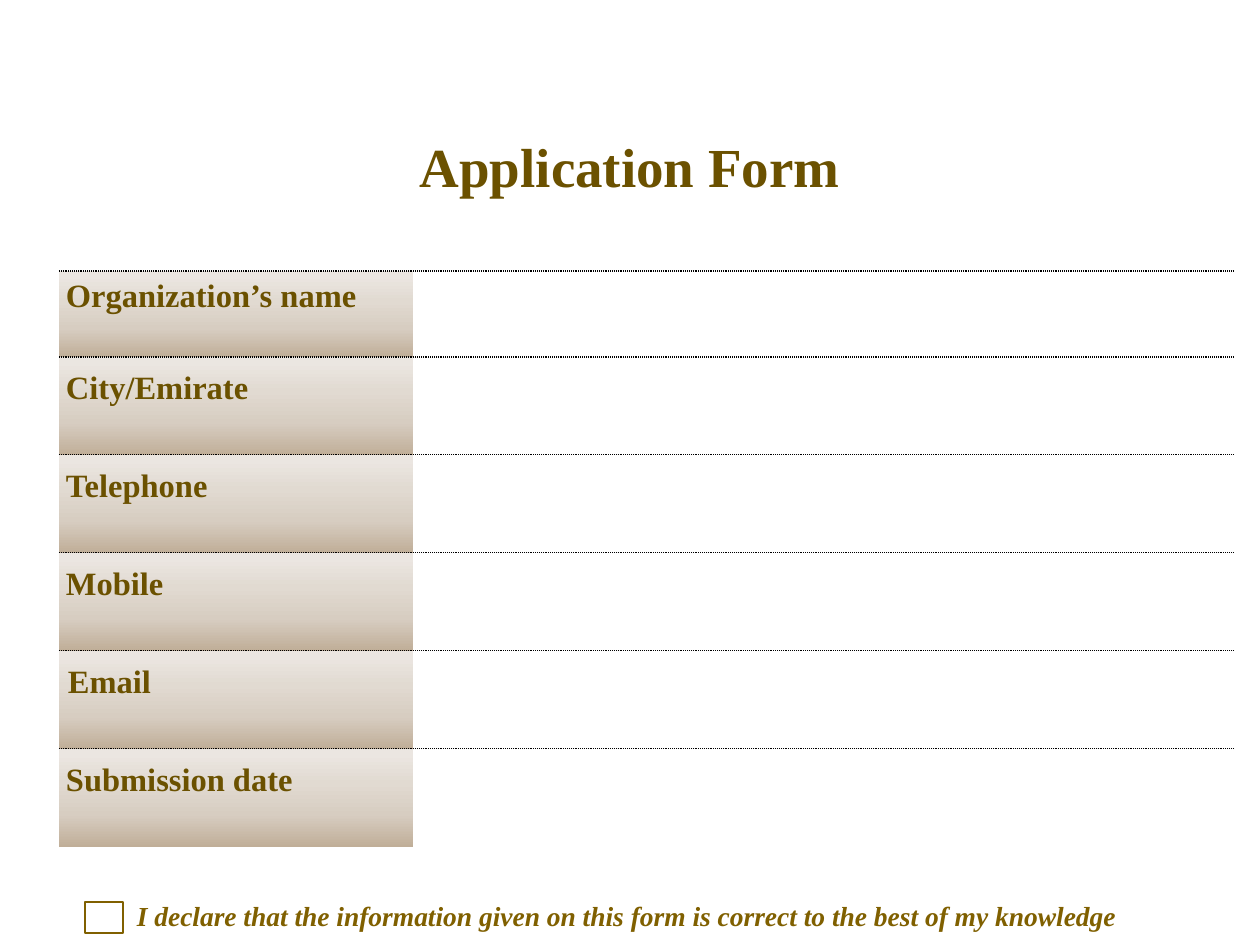
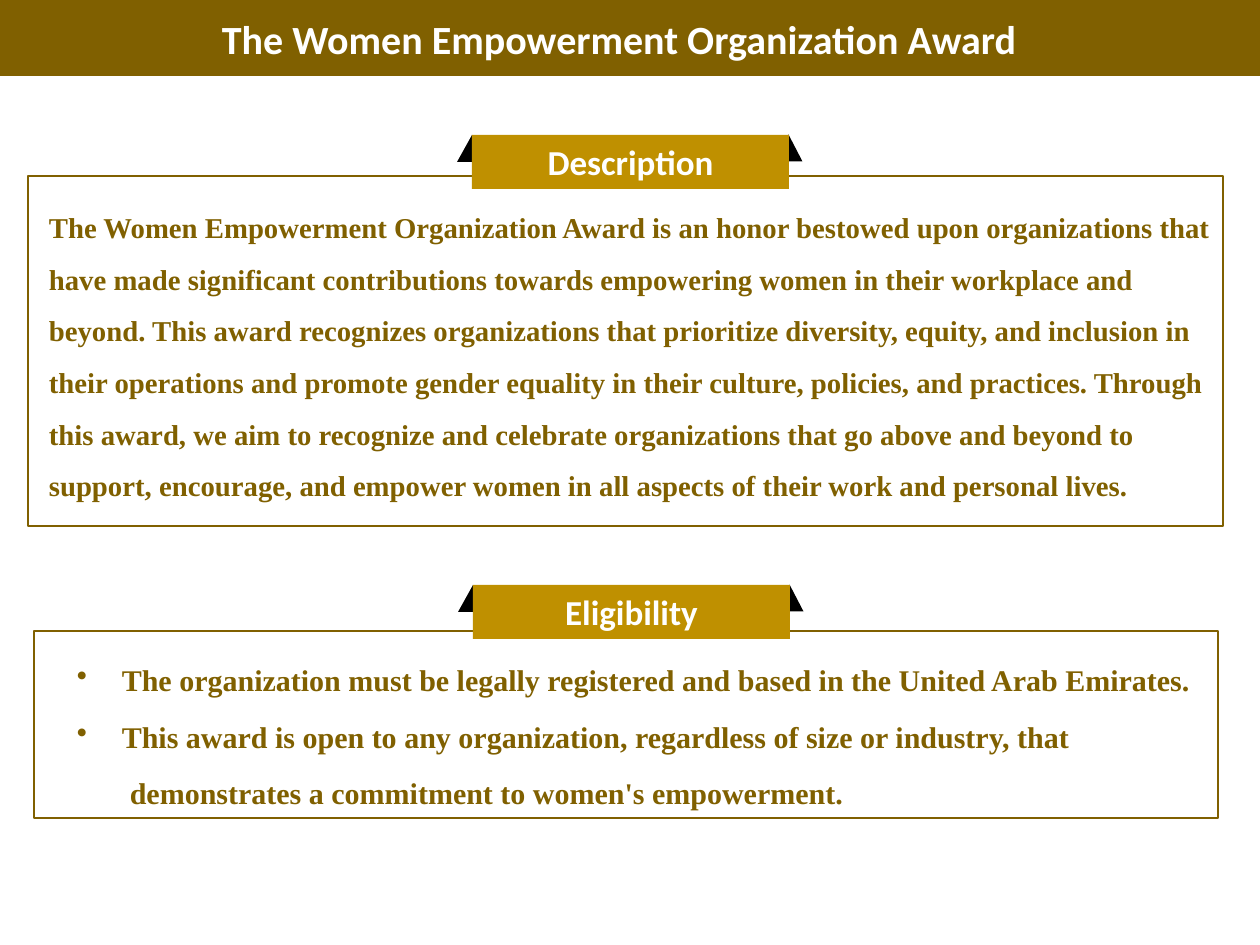
from dataclasses import dataclass
from lxml.etree import SubElement
from pptx import Presentation
from pptx.dml.color import RGBColor
from pptx.enum.shapes import MSO_SHAPE
from pptx.enum.text import MSO_ANCHOR, PP_ALIGN
from pptx.oxml import parse_xml
from pptx.oxml.ns import nsdecls, qn
from pptx.util import Pt

PX = 10160  # EMU in one px, 90 px to the inch


@dataclass(frozen=True)
class Theme:
    gold: str = "806000"
    deep_gold: str = "6B5100"
    ribbon: str = "BF9000"
    black: str = "000000"
    white: str = "FFFFFF"
    label_stops: tuple = ((0, "C0AE98"), (33, "D7CDC1"), (65, "E1DAD1"), (94, "EBE6E1"))
    serif: str = "Times New Roman"
    sans: str = "Calibri"
    form_title: int = 44
    band_title: int = 32
    ribbon_label: int = 28
    field_label: int = 26
    criteria: int = 24
    body: int = 23
    declaration: int = 22


T = Theme()

FIELDS = ["Organization’s name", "City/Emirate", "Telephone", "Mobile", "Email", "Submission date"]

DESCRIPTION = (
    "The Women Empowerment Organization Award is an honor bestowed upon organizations that have made "
    "significant contributions towards empowering women in their workplace and beyond. This award "
    "recognizes organizations that prioritize diversity, equity, and inclusion in their operations and "
    "promote gender equality in their culture, policies, and practices. Through this award, we aim to "
    "recognize and celebrate organizations that go above and beyond to support, encourage, and empower "
    "women in all aspects of their work and personal lives."
)

# Text, left indent in px, bulleted
CRITERIA = [
    ("The organization must be legally registered and based in the United Arab Emirates.", 45, True),
    ("This award is open to any organization, regardless of size or industry, that", 45, True),
    ("demonstrates a commitment to women's empowerment.", 53, False),
]


def px(*values):
    return [round(v * PX) for v in values]


def add_run(p, text, size, color, font=T.serif, italic=False):
    r = p.add_run()
    r.text = text
    r.font.name = font
    r.font.size = Pt(size)
    r.font.bold = True
    r.font.italic = italic
    r.font.color.rgb = RGBColor.from_string(color)


def add_box(s, box, fill=None, line=None, kind=MSO_SHAPE.RECTANGLE):
    sp = s.shapes.add_shape(kind, *px(*box))
    sp.shadow.inherit = False
    if fill:
        sp.fill.solid()
        sp.fill.fore_color.rgb = RGBColor.from_string(fill)
    else:
        sp.fill.background()
    if line:
        sp.line.color.rgb = RGBColor.from_string(line)
        sp.line.width = Pt(1)
    else:
        sp.line.fill.background()
    return sp


def add_label(sp, text, size, color, font):
    tf = sp.text_frame
    tf.vertical_anchor = MSO_ANCHOR.MIDDLE
    p = tf.paragraphs[0]
    p.alignment = PP_ALIGN.CENTER
    add_run(p, text, size, color, font)


def add_text(s, box):
    tf = s.shapes.add_textbox(*px(*box)).text_frame
    tf.word_wrap = True
    return tf


def set_indent(p, left, hanging=0):
    pPr = p._p.get_or_add_pPr()
    pPr.set("marL", str(left * PX))
    pPr.set("indent", str(-hanging * PX))
    return pPr


# Table cells
def set_borders(cell, top, bottom):
    tcPr = cell._tc.get_or_add_tcPr()
    for i, (side, dotted) in enumerate((("L", False), ("R", False), ("T", top), ("B", bottom))):
        look = (f'<a:solidFill><a:srgbClr val="{T.black}"/></a:solidFill><a:prstDash val="sysDot"/>'
                if dotted else "<a:noFill/>")
        tcPr.insert(i, parse_xml(f'<a:ln{side} {nsdecls("a")} w="12700">{look}</a:ln{side}>'))


def set_gradient(cell):
    stops = "".join(f'<a:gs pos="{pos * 1000}"><a:srgbClr val="{color}"/></a:gs>'
                    for pos, color in T.label_stops)
    cell._tc.get_or_add_tcPr().append(parse_xml(
        f'<a:gradFill {nsdecls("a")}><a:gsLst>{stops}</a:gsLst>'
        '<a:lin ang="16200000" scaled="0"/></a:gradFill>'))


def add_form_table(s):
    heights = [86] + [98] * (len(FIELDS) - 1)
    widths = [354, 821]
    table = s.shapes.add_table(len(FIELDS), 2, *px(59, 271, sum(widths), sum(heights))).table
    table.first_row = table.horz_banding = False
    for column, width in zip(table.columns, widths):
        column.width = width * PX
    for i, (field, height) in enumerate(zip(FIELDS, heights)):
        table.rows[i].height = height * PX
        label, entry = table.cell(i, 0), table.cell(i, 1)
        label.margin_left, label.margin_top, label.margin_right, label.margin_bottom = px(7, 0, 7, 35)
        label.vertical_anchor = MSO_ANCHOR.MIDDLE
        p = label.text_frame.paragraphs[0]
        if field == "Email":
            set_indent(p, 2)
        add_run(p, field, T.field_label, T.deep_gold)
        set_gradient(label)
        entry.fill.background()
        for cell in (label, entry):
            set_borders(cell, top=True, bottom=i < len(FIELDS) - 1)


# Framed section with a folded ribbon on its top edge
def add_section(s, label, frame, left, top):
    add_box(s, frame, line=T.gold)
    folds = [((left - 15, top, 15, 27), 0), ((left + 310, top + 6, 27, 14), 90)]
    for box, rotation in folds:
        fold = add_box(s, box, T.black, kind=MSO_SHAPE.ISOSCELES_TRIANGLE)
        fold.adjustments[0] = 1
        fold.rotation = rotation
    ribbon = add_box(s, (left, top, 317, 54), T.ribbon)
    add_label(ribbon, label, T.ribbon_label, T.white, T.sans)


def space_lines(p, first):
    p.line_spacing = 1.5
    p.space_after = Pt(1.1)
    if not first:
        p.space_before = Pt(1.1)


def add_criteria(s):
    tf = add_text(s, (68, 639, 1163, 171))
    for i, (text, left, bulleted) in enumerate(CRITERIA):
        p = tf.add_paragraph() if i else tf.paragraphs[0]
        space_lines(p, first=i == 0)
        p.alignment = PP_ALIGN.JUSTIFY
        pPr = set_indent(p, left, left if bulleted else 0)
        if bulleted:
            SubElement(pPr, qn("a:buChar")).set("char", "•")
        add_run(p, text, T.criteria, T.gold)


def build_form(s):
    add_form_table(s)
    title = add_box(s, (0, 98, 1260, 136), T.white)
    add_label(title, "Application Form", T.form_title, T.deep_gold, T.serif)
    # Declaration with its tick box
    tf = add_text(s, (128, 895, 1069, 42))
    add_run(tf.paragraphs[0],
            "I declare that the information given on this form is correct to the best of my knowledge",
            T.declaration, T.gold, italic=True)
    add_box(s, (85, 902, 38, 31), T.white, T.gold)


def build_award(s):
    # Title band
    add_box(s, (0, -2, 1260, 78), T.gold)
    p = add_text(s, (28, 10, 1183, 58)).paragraphs[0]
    p.alignment = PP_ALIGN.CENTER
    add_run(p, "The Women Empowerment Organization Award", T.band_title, T.white, T.sans)
    # Description
    add_section(s, "Description", (28, 176, 1195, 350), 472, 135)
    p = add_text(s, (40, 188, 1184, 317)).paragraphs[0]
    space_lines(p, first=True)
    add_run(p, DESCRIPTION, T.body, T.gold)
    # Eligibility
    add_section(s, "Eligibility", (34, 631, 1184, 187), 473, 585)
    add_criteria(s)


def main():
    prs = Presentation()
    prs.slide_width, prs.slide_height = px(1260, 945)
    for build in (build_form, build_award):
        build(prs.slides.add_slide(prs.slide_layouts[6]))
    prs.save("out.pptx")


if __name__ == "__main__":
    main()
